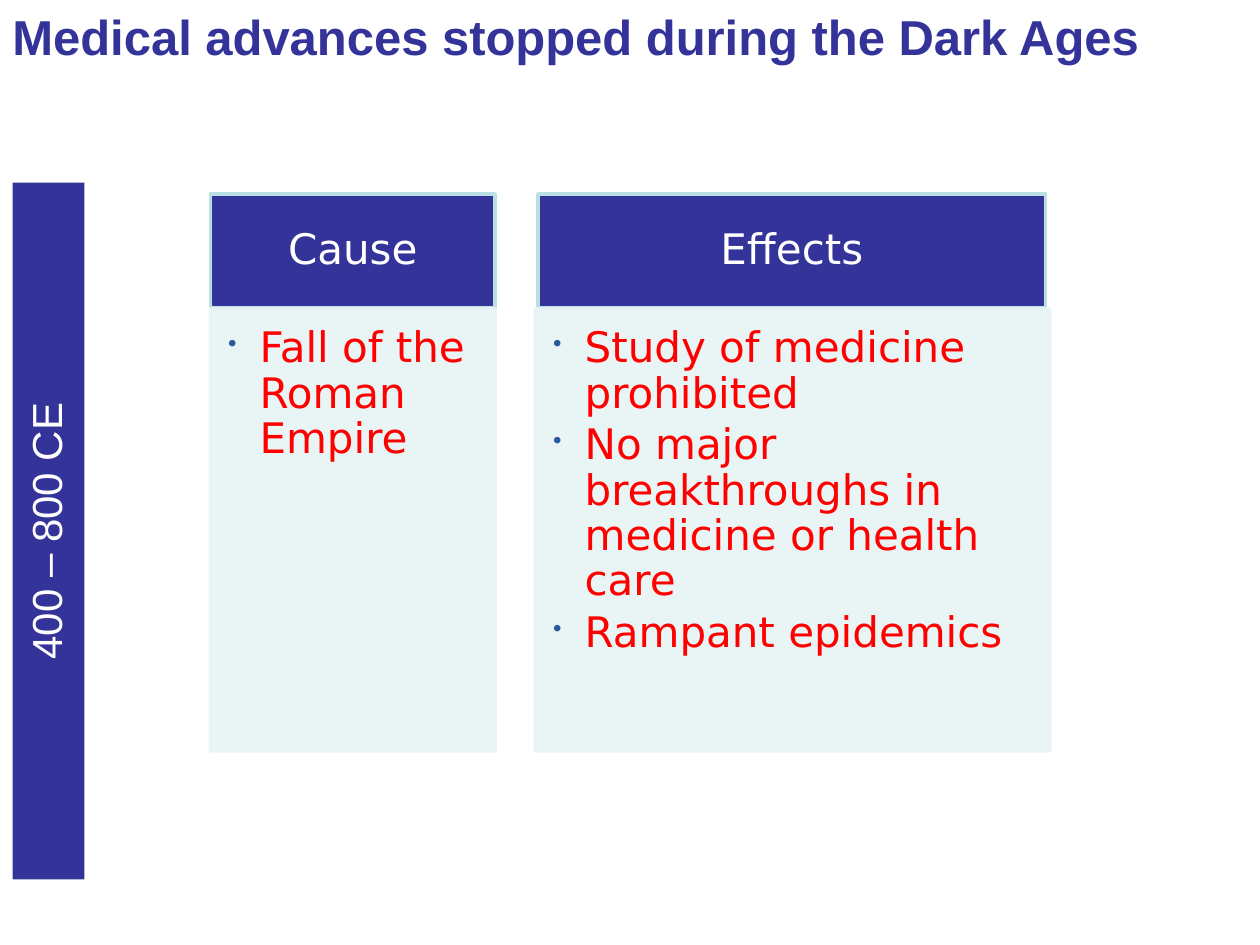
from dataclasses import dataclass

from lxml import etree
from pptx import Presentation
from pptx import util as u
from pptx.dml.color import RGBColor
from pptx.enum import shapes, text
from pptx.oxml.ns import qn

# The slide is a grid of 100 columns by 75 rows
COLUMNS, ROWS = 100, 75
NAVY, PALE, EDGE = "333399", "E7F3F4", "BBE0E3"
WHITE, RED, BULLET = "FFFFFF", "FF0000", "2B5A9C"
HEADING_ROW, BODY_ROW = 15.4, 24.5
HEADING_ROWS, BODY_ROWS = 9, 35.1

deck = Presentation()
deck.slide_width, deck.slide_height = u.Inches(10), u.Inches(7.5)
slide = deck.slides.add_slide(deck.slide_layouts[6])


@dataclass
class Area:
    column: float
    row: float
    columns: float
    rows: float

    def box(self) -> list[int]:
        across, down = deck.slide_width / COLUMNS, deck.slide_height / ROWS
        return [round(self.column * across), round(self.row * down),
                round(self.columns * across), round(self.rows * down)]


@dataclass
class Panel:
    heading: str
    points: list[str]
    heading_column: float
    heading_columns: float
    body_column: float
    body_columns: float


PANELS = [
    Panel("Cause", ["Fall of the Roman Empire"], 16.7, 22.6, 16.7, 22.6),
    Panel("Effects", ["Study of medicine prohibited",
                      "No major breakthroughs in medicine or health care",
                      "Rampant epidemics"], 42.7, 40.3, 42.5, 40.8),
]


def color(value: str) -> RGBColor:
    return RGBColor.from_string(value)


def apply(target, values: dict) -> None:
    for name, value in values.items():
        setattr(target, name, value)


def set_insets(frame, *inches: float) -> None:
    sides = ("margin_left", "margin_top", "margin_right", "margin_bottom")
    apply(frame, dict(zip(sides, map(u.Inches, inches))))


def add_block(area: Area, fill: str, edge: str | None = None, opacity: int = 100):
    block = slide.shapes.add_shape(shapes.MSO_SHAPE.RECTANGLE, *area.box())
    block.shadow.inherit = False
    block.fill.solid()
    block.fill.fore_color.rgb = color(fill)
    if edge:
        block.line.color.rgb = color(edge)
        block.line.width = u.Pt(2)
    else:
        block.line.fill.background()
    if opacity < 100:
        for tone in block._element.spPr.iter(qn("a:srgbClr")):
            etree.SubElement(tone, qn("a:alpha"), val=str(opacity * 1000))
    block.text_frame.word_wrap = True
    return block


def write(paragraph, words: str, ink: str, font: str = "DejaVu Sans",
          size: float = 24, bold: bool = False, **layout) -> None:
    paragraph.text = words
    apply(paragraph, layout)
    apply(paragraph.font, {"name": font, "size": u.Pt(size), "bold": bold})
    paragraph.font.color.rgb = color(ink)


def add_bullet(paragraph) -> None:
    properties = paragraph._p.get_or_add_pPr()
    indent = u.Inches(0.25)
    properties.set("marL", str(indent))
    properties.set("indent", str(-indent))
    tint = etree.SubElement(properties, qn("a:buClr"))
    etree.SubElement(tint, qn("a:srgbClr"), val=BULLET)
    etree.SubElement(properties, qn("a:buSzPct"), val="60000")
    etree.SubElement(properties, qn("a:buChar"), char="•")


def add_panel(panel: Panel) -> None:
    heading = add_block(Area(panel.heading_column, HEADING_ROW,
                             panel.heading_columns, HEADING_ROWS), NAVY, EDGE)
    set_insets(heading.text_frame, 0.19, 0.11, 0.19, 0.11)
    write(heading.text_frame.paragraphs[0], panel.heading, WHITE,
          alignment=text.PP_ALIGN.CENTER, line_spacing=0.9)

    body = add_block(Area(panel.body_column, BODY_ROW,
                          panel.body_columns, BODY_ROWS), PALE, PALE, 90)
    frame = body.text_frame
    frame.vertical_anchor = text.MSO_ANCHOR.TOP
    set_insets(frame, 0.14, 0.14, 0.19, 0.21)
    for index, point in enumerate(panel.points):
        paragraph = frame.add_paragraph() if index else frame.paragraphs[0]
        add_bullet(paragraph)
        write(paragraph, point, RED, level=1, alignment=text.PP_ALIGN.LEFT,
              line_spacing=0.9, space_after=u.Pt(3.7))


# Title
title = slide.shapes.add_textbox(*Area(0, 0, 96.5, 8.6).box())
title.text_frame.word_wrap = True
write(title.text_frame.paragraphs[0], "Medical advances stopped during the Dark Ages",
      NAVY, "Arial", 28, True)

# Period bar, read upwards
period = add_block(Area(1, 14.5, 5.7, 55.3), NAVY)
period.text_frame._txBody.bodyPr.set("vert", "vert270")
write(period.text_frame.paragraphs[0], "400 – 800 CE", WHITE, "Arial",
      alignment=text.PP_ALIGN.CENTER, line_spacing=0.9)

# Cause and effects
for panel in PANELS:
    add_panel(panel)

deck.save("out.pptx")
